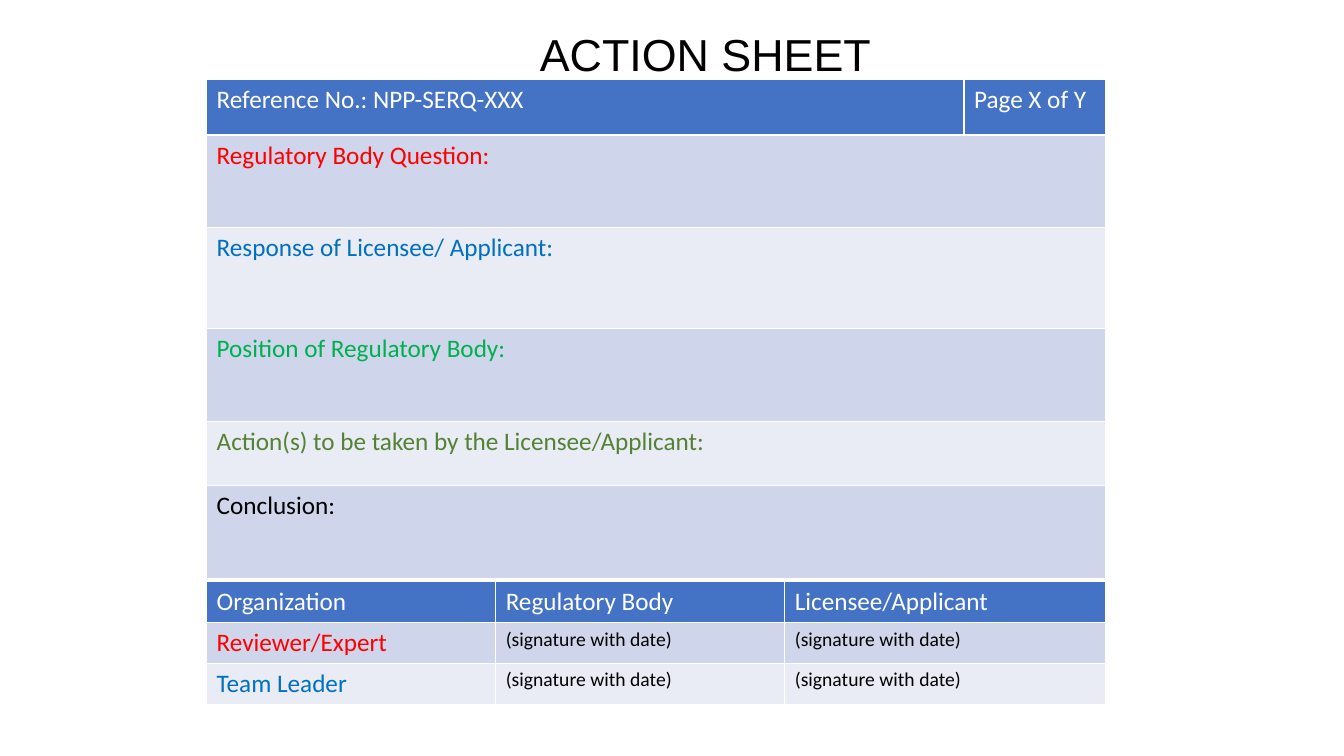
"""Build the action sheet slide with its question form and signature table."""
from dataclasses import dataclass

from pptx import Presentation
from pptx.dml.color import RGBColor
from pptx.enum.text import MSO_ANCHOR, PP_ALIGN
from pptx.slide import Slide
from pptx.util import Pt

BLACK = RGBColor(0x00, 0x00, 0x00)
WHITE = RGBColor(0xFF, 0xFF, 0xFF)
RED = RGBColor(0xFF, 0x00, 0x00)
BLUE = RGBColor(0x00, 0x70, 0xC0)
GREEN = RGBColor(0x00, 0xB0, 0x50)
OLIVE = RGBColor(0x54, 0x82, 0x35)
HEADER_FILL = RGBColor(0x44, 0x72, 0xC4)
BAND_FILLS = (RGBColor(0xCF, 0xD5, 0xEA), RGBColor(0xE9, 0xEB, 0xF5))
TABLE_LEFT = 147.6


@dataclass(frozen=True)
class Label:
    text: str
    color: RGBColor = WHITE
    size: float = 18


@dataclass(frozen=True)
class Grid:
    top: float
    widths: tuple[float, ...]
    heights: tuple[float, ...]
    rows: tuple[tuple[Label, ...], ...]


SIGNATURE = Label("(signature with date)", BLACK, 14)

FORM = Grid(
    top=56.9,
    widths=(541, 101),
    heights=(39.6, 66.2, 72, 66.2, 46, 66.2),
    rows=(
        (Label("Reference No.: NPP-SERQ-XXX"), Label("Page X of Y")),
        (Label("Regulatory Body Question:", RED),),
        (Label("Response of Licensee/ Applicant:", BLUE),),
        (Label("Position of Regulatory Body:", GREEN),),
        (Label("Action(s) to be taken by the Licensee/Applicant:", OLIVE),),
        (Label("Conclusion:", BLACK),),
    ),
)

SIGNATURES = Grid(
    top=415.4,
    widths=(206.5, 206.5, 229),
    heights=(29, 29, 29),
    rows=(
        (Label("Organization"), Label("Regulatory Body"), Label("Licensee/Applicant")),
        (Label("Reviewer/Expert", RED), SIGNATURE, SIGNATURE),
        (Label("Team Leader", BLUE), SIGNATURE, SIGNATURE),
    ),
)


def add_title(s: Slide, text: str) -> None:
    """Place and format the title placeholder."""
    title = s.shapes.title
    title.left, title.top, title.width, title.height = Pt(180), Pt(17.3), Pt(648), Pt(47.5)
    tf = title.text_frame
    tf.word_wrap = True
    tf.vertical_anchor = MSO_ANCHOR.MIDDLE
    p = tf.paragraphs[0]
    p.alignment = PP_ALIGN.CENTER
    p.line_spacing = 0.9
    r = p.add_run()
    r.text = text
    r.font.name, r.font.size = "Arial", Pt(32)
    r.font.color.rgb = BLACK


def add_grid(s: Slide, grid: Grid) -> None:
    """Draw a banded table, merging the rows that hold a single label."""
    frame = s.shapes.add_table(
        len(grid.heights), len(grid.widths), Pt(TABLE_LEFT), Pt(grid.top),
        Pt(sum(grid.widths)), Pt(sum(grid.heights)),
    )
    table = frame.table
    for column, width in zip(table.columns, grid.widths):
        column.width = Pt(width)
    for i, (height, labels) in enumerate(zip(grid.heights, grid.rows)):
        table.rows[i].height = Pt(height)
        if len(labels) == 1:
            table.cell(i, 0).merge(table.cell(i, len(grid.widths) - 1))
        for j, label in enumerate(labels):
            cell = table.cell(i, j)
            cell.fill.solid()
            cell.fill.fore_color.rgb = BAND_FILLS[(i - 1) % 2] if i else HEADER_FILL
            r = cell.text_frame.paragraphs[0].add_run()
            r.text = label.text
            r.font.name, r.font.size, r.font.bold = "Calibri", Pt(label.size), False
            r.font.color.rgb = label.color


def main() -> None:
    """Create the slide and save it."""
    prs = Presentation()
    prs.slide_width, prs.slide_height = Pt(960), Pt(540)
    s = prs.slides.add_slide(prs.slide_layouts[5])
    add_title(s, "ACTION SHEET")
    for grid in (FORM, SIGNATURES):
        add_grid(s, grid)
    prs.save("out.pptx")


if __name__ == "__main__":
    main()
